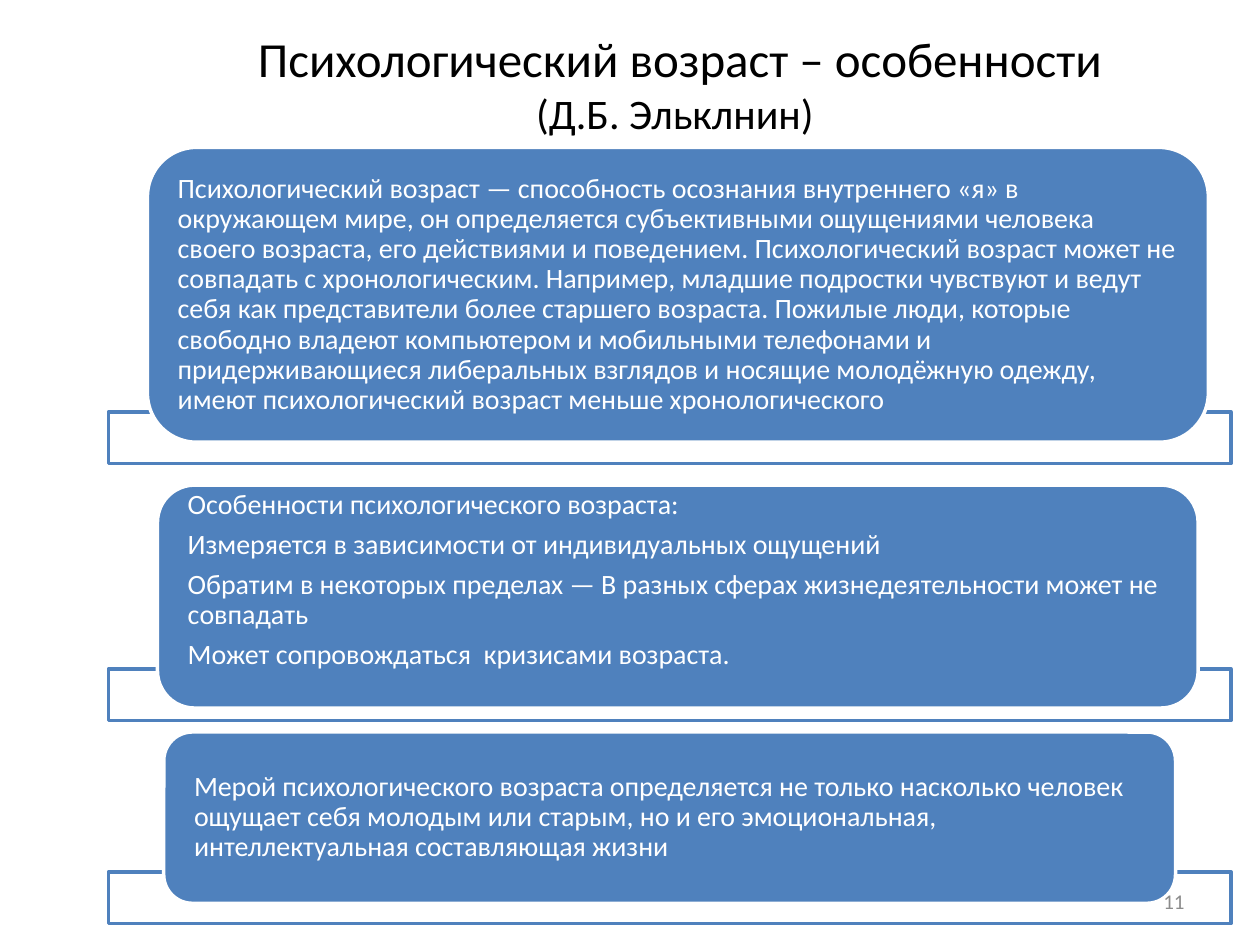
from pptx import Presentation
from pptx.dml.color import RGBColor
from pptx.enum.shapes import MSO_SHAPE
from pptx.enum.text import MSO_ANCHOR, MSO_AUTO_SIZE, PP_ALIGN
from pptx.util import Inches, Pt

COLORS = {"blue": "4F81BD", "white": "FFFFFF", "black": "000000", "gray": "8C8C8C"}
TITLE = [("Психологический возраст – особенности", 28), ("(Д.Б. Эльклнин) ", 24)]
PAGE_NUMBER = "11"
BAR_LEFT, BAR_WIDTH, BAR_HEIGHT = 0.86, 8.91, 0.41
BLOCKS = [
    {"box": (1.17, 1.17, 8.42, 2.34), "bar_top": 3.27, "lift": 0, "lines": [
        "Психологический возраст\u00a0— способность осознания внутреннего «я» в окружающем мире, "
        "он определяется субъективными ощущениями человека своего возраста, его действиями и "
        "поведением. Психологический возраст может не совпадать с хронологическим. Например, "
        "младшие подростки\u00a0чувствуют и ведут себя как представители более старшего возраста. "
        "Пожилые люди, которые свободно владеют компьютером и мобильными телефонами и "
        "придерживающиеся либеральных взглядов и носящие молодёжную одежду, имеют "
        "психологический возраст меньше хронологического"]},
    {"box": (1.25, 3.85, 8.26, 1.77), "bar_top": 5.31, "lift": 0.26, "lines": [
        "Особенности психологического возраста:",
        "Измеряется в зависимости от индивидуальных ощущений",
        "Обратим в некоторых пределах\u00a0— В разных сферах жизнедеятельности может не совпадать",
        "Может сопровождаться\u00a0 кризисами возраста."]},
    {"box": (1.3, 5.81, 8.03, 1.36), "bar_top": 6.92, "lift": 0, "lines": [
        "Мерой психологического возраста определяется не только насколько человек ощущает себя "
        "молодым или старым, но и его эмоциональная, интеллектуальная составляющая жизни"]},
]


def rgb(name):
    return RGBColor.from_string(COLORS[name])


def set_all(obj, fmt):
    for key, value in fmt.items():
        setattr(obj, key, value)


def place(sp, box):
    set_all(sp, dict(zip(("left", "top", "width", "height"), map(Inches, box))))


def add_run(p, text, size, color):
    r = p.add_run()
    r.text = text
    set_all(r.font, {"size": Pt(size), "name": "Calibri"})
    r.font.color.rgb = rgb(color)


def add_panel(s, kind, box, fill, line):
    sp = s.shapes.add_shape(kind, *map(Inches, box))
    sp.shadow.inherit = False
    sp.fill.solid()
    sp.fill.fore_color.rgb = rgb(fill)
    sp.line.color.rgb = rgb(line)
    sp.line.width = Pt(2)


def add_text(s, box, lines, size, color, frame_fmt, par_fmt):
    tf = s.shapes.add_textbox(*map(Inches, box)).text_frame
    set_all(tf, {"word_wrap": True, "vertical_anchor": MSO_ANCHOR.MIDDLE, **frame_fmt})
    for i, line in enumerate(lines):
        p = tf.add_paragraph() if i else tf.paragraphs[0]
        set_all(p, par_fmt)
        add_run(p, line, size, color)


def main():
    """Build the slide on psychological age."""
    prs = Presentation()
    set_all(prs, {"slide_width": Inches(10), "slide_height": Inches(7.5)})
    s = prs.slides.add_slide(prs.slide_layouts[5])

    title = s.shapes.title
    place(title, (1.02, 0.3, 8.75, 0.72))
    tf = title.text_frame
    set_all(tf, {"auto_size": MSO_AUTO_SIZE.NONE, "vertical_anchor": MSO_ANCHOR.MIDDLE})
    p = tf.paragraphs[0]
    p.alignment = PP_ALIGN.CENTER
    for i, (text, size) in enumerate(TITLE):
        if i:
            p.add_line_break()
        add_run(p, text, size, "black")

    side = Inches(0.24)
    par_fmt = {"line_spacing": 0.9, "space_after": Pt(5.6), "alignment": PP_ALIGN.LEFT}
    for block in BLOCKS:
        bar = (BAR_LEFT, block["bar_top"], BAR_WIDTH, BAR_HEIGHT)
        add_panel(s, MSO_SHAPE.RECTANGLE, bar, "white", "blue")
        add_panel(s, MSO_SHAPE.ROUNDED_RECTANGLE, block["box"], "blue", "white")
        frame_fmt = {"margin_left": side, "margin_right": side, "margin_top": 0,
                     "margin_bottom": Inches(block["lift"])}
        add_text(s, block["box"], block["lines"], 16, "white", frame_fmt, par_fmt)

    add_text(s, (7.17, 6.95, 2.33, 0.4), [PAGE_NUMBER], 12, "gray", {},
             {"alignment": PP_ALIGN.RIGHT})
    prs.save("out.pptx")


if __name__ == "__main__":
    main()
